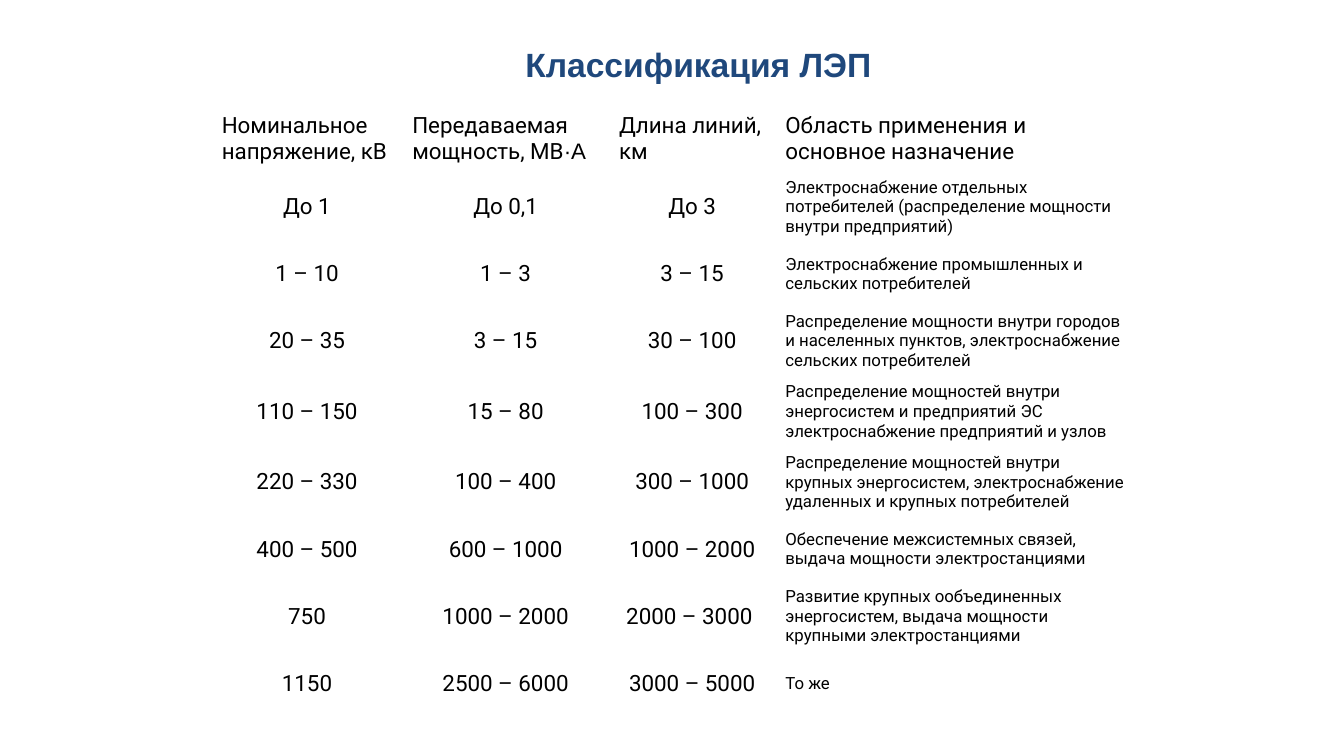
"""Build the slide with the classification of power transmission lines."""
from pptx import Presentation
from pptx.dml.color import RGBColor
from pptx.enum import text
from pptx.util import Inches, Pt

TITLE = "Классификация ЛЭП"
ROWS = [
    ("Номинальное напряжение, кВ", "Передаваемая мощность, МВ·А", "Длина линий, км",
     "Область применения и основное назначение"),
    ("До 1", "До 0,1", "До 3",
     "Электроснабжение отдельных потребителей (распределение мощности внутри предприятий)"),
    ("1 – 10", "1 – 3", "3 – 15",
     "Электроснабжение промышленных и сельских потребителей"),
    ("20 – 35", "3 – 15", "30 – 100",
     "Распределение мощности внутри городов и населенных пунктов, "
     "электроснабжение сельских потребителей"),
    ("110 – 150", "15 – 80", "100 – 300",
     "Распределение мощностей внутри энергосистем и предприятий ЭС "
     "электроснабжение предприятий и узлов"),
    ("220 – 330", "100 – 400", "300 – 1000",
     "Распределение мощностей внутри крупных энергосистем, "
     "электроснабжение удаленных и крупных потребителей"),
    ("400 – 500", "600 – 1000", "1000 – 2000",
     "Обеспечение межсистемных связей, выдача мощности электростанциями"),
    ("750", "1000 – 2000", "2000 – 3000 ",
     "Развитие крупных oобъединенных энергосистем, выдача мощности крупными электростанциями"),
    ("1150", "2500 – 6000", "3000 – 5000", "То же"),
]
COL_WIDTHS = [1.89, 2.05, 1.65, 3.62]
ROW_HEIGHT = 0.63
WHITE = RGBColor(0xFF, 0xFF, 0xFF)
BLACK = RGBColor(0, 0, 0)
NAVY = RGBColor(0x1F, 0x48, 0x7C)


def set_font(p, name, size, color, bold=False):
    """Format all runs of a paragraph alike."""
    f = p.font
    f.name, f.size, f.bold = name, Pt(size), bold
    f.color.rgb = color


def add_title(s):
    """Place and format the slide title."""
    title = s.shapes.title
    title.left, title.top = Inches(5.11), Inches(0.39)
    title.width, title.height = Inches(3.64), Inches(0.5)
    tf = title.text_frame
    tf.text = TITLE
    tf.word_wrap = False
    tf.auto_size = text.MSO_AUTO_SIZE.SHAPE_TO_FIT_TEXT
    tf.vertical_anchor = text.MSO_ANCHOR.TOP
    p = tf.paragraphs[0]
    p.alignment = text.PP_ALIGN.LEFT
    set_font(p, "Arial", 24, NAVY, bold=True)


def fill_cell(cell, value, is_header, is_purpose):
    """Write one table cell, with the unit dot in Arial."""
    cell.fill.solid()
    cell.fill.fore_color.rgb = WHITE
    cell.vertical_anchor = text.MSO_ANCHOR.TOP if is_header else text.MSO_ANCHOR.MIDDLE
    p = cell.text_frame.paragraphs[0]
    centered = not (is_header or is_purpose)
    p.alignment = text.PP_ALIGN.CENTER if centered else text.PP_ALIGN.LEFT
    set_font(p, "Roboto", 12 if is_purpose and not is_header else 16, BLACK)
    main, dot, unit = value.partition("·")
    p.add_run().text = main
    if dot:
        r = p.add_run()
        r.text = dot + unit
        r.font.name = "Arial"


def add_lines_table(s):
    """Add the table of line classes."""
    table = s.shapes.add_table(
        len(ROWS), len(COL_WIDTHS), Inches(2.1), Inches(1.07),
        Inches(sum(COL_WIDTHS)), Inches(ROW_HEIGHT * len(ROWS))).table
    table.first_row = table.horz_banding = False
    for column, width in zip(table.columns, COL_WIDTHS):
        column.width = Inches(width)
    for i, row in enumerate(ROWS):
        table.rows[i].height = Inches(ROW_HEIGHT)
        for j, value in enumerate(row):
            fill_cell(table.cell(i, j), value, i == 0, j == len(row) - 1)


def main():
    """Create and save the presentation."""
    prs = Presentation()
    prs.slide_width, prs.slide_height = Inches(13.33), Inches(7.5)
    s = prs.slides.add_slide(prs.slide_layouts[5])
    add_title(s)
    add_lines_table(s)
    prs.save("out.pptx")


if __name__ == "__main__":
    main()
